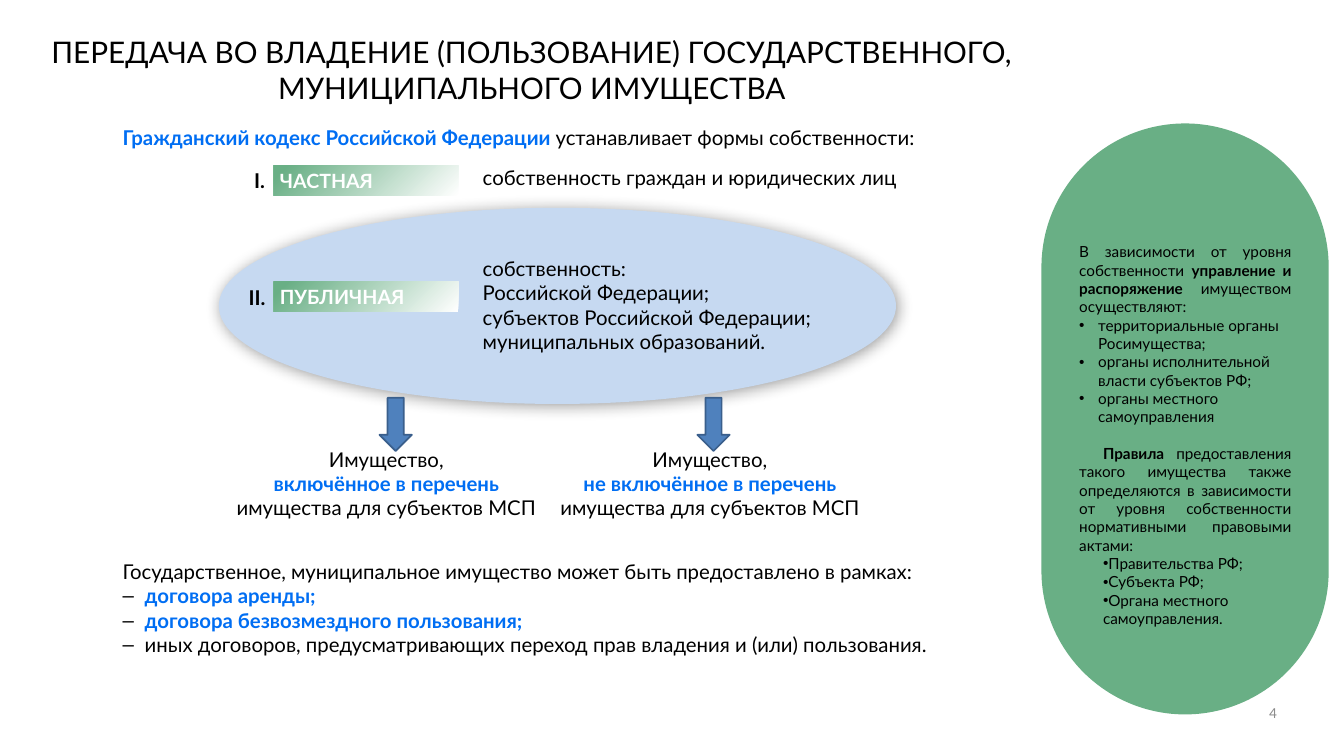
from lxml import etree
from pptx import Presentation
from pptx import util as u
from pptx.dml import color
from pptx.enum import shapes, text
from pptx.oxml import ns

COLOURS = {"text": "000000", "accent": "006EF3", "green": "69AF85", "white": "FFFFFF",
           "pale": "C6D9F1", "arrow": "4F81BD", "arrow_edge": "3A5F8C", "number": "8C8C8C"}
LEFT, CENTER, RIGHT, JUSTIFY = (text.PP_ALIGN.LEFT, text.PP_ALIGN.CENTER,
                                text.PP_ALIGN.RIGHT, text.PP_ALIGN.JUSTIFY)


def rgb(name):
    return color.RGBColor.from_string(COLOURS[name])


def add_xml(parent, xml):
    parent.append(etree.fromstring(xml.replace(">", f' xmlns:a="{ns.nsuri("a")}">', 1)
                                   if "/>" not in xml.split(">", 1)[0] + ">"
                                   else xml.replace("/>", f' xmlns:a="{ns.nsuri("a")}"/>', 1)))


def add_spans(para, spans, size, tint="text", font="Lato"):
    """Add runs to a paragraph; each span is plain text or (text, colour) for bold."""
    for span in [spans] if isinstance(spans, str) else spans:
        words, shade = (span, tint) if isinstance(span, str) else span
        run = para.add_run()
        run.text = words
        run.font.name, run.font.size = font, u.Pt(size)
        run.font.bold = not isinstance(span, str)
        run.font.color.rgb = rgb(shade)


def set_bullet(para, mark, margin, indent):
    props = para._p.get_or_add_pPr()
    props.set("marL", str(u.Inches(margin)))
    props.set("indent", str(u.Inches(indent)))
    if mark:
        add_xml(props, f'<a:buClr><a:srgbClr val="{COLOURS["text"]}"/></a:buClr>')
        add_xml(props, '<a:buFont typeface="Arial"/>')
        add_xml(props, f'<a:buChar char="{mark}"/>')


def add_text(slide, box, lines, size=24, align=LEFT, tint="text", font="Lato"):
    frame = slide.shapes.add_textbox(*map(u.Inches, box)).text_frame
    frame.word_wrap = True
    for index, line in enumerate(lines):
        para = frame.paragraphs[0] if index == 0 else frame.add_paragraph()
        para.alignment = align
        add_spans(para, line, size, tint, font)
    return frame


def add_figure(slide, kind, box, fill):
    figure = slide.shapes.add_shape(kind, *map(u.Inches, box))
    figure.shadow.inherit = False
    figure.fill.solid()
    figure.fill.fore_color.rgb = rgb(fill)
    figure.line.fill.background()
    return figure


def add_title(slide, box, words):
    title = slide.shapes.title
    title.left, title.top, title.width, title.height = map(u.Inches, box)
    frame = title.text_frame
    frame.word_wrap = True
    frame.vertical_anchor = text.MSO_ANCHOR.TOP
    frame.auto_size = text.MSO_AUTO_SIZE.NONE
    frame.paragraphs[0].alignment = CENTER
    add_spans(frame.paragraphs[0], words, 35)


def add_badge(slide, box, words):
    """Add a label whose green fades out from its top left corner."""
    badge = add_figure(slide, shapes.MSO_SHAPE.RECTANGLE, box, "green")
    badge.fill.gradient()
    gradient = badge._element.spPr.find(ns.qn("a:gradFill"))
    for child in list(gradient):
        gradient.remove(child)
    stops = "".join(f'<a:gs pos="{place}"><a:srgbClr val="{COLOURS[name]}"/></a:gs>'
                    for place, name in ((6000, "green"), (100000, "white")))
    add_xml(gradient, f"<a:gsLst>{stops}</a:gsLst>")
    add_xml(gradient, '<a:path path="circle"><a:fillToRect r="100000" b="100000"/></a:path>')
    frame = badge.text_frame
    frame.word_wrap = False
    frame.vertical_anchor = text.MSO_ANCHOR.MIDDLE
    frame.paragraphs[0].alignment = LEFT
    add_spans(frame.paragraphs[0], [(words, "white")], 23.1)


def add_ownership_forms(slide, box):
    left, top, width, height = box
    add_text(slide, (left, top, width, 0.5),
             [[("Гражданский кодекс Российской Федерации ", "accent"),
               "устанавливает формы собственности:"]])
    oval = add_figure(slide, shapes.MSO_SHAPE.OVAL, (left + 1.67, top + 1.4, 11.08, 3.21), "pale")
    effects = oval._element.spPr.find(ns.qn("a:effectLst"))
    add_xml(effects, f'<a:outerShdw blurRad="{u.Pt(19)}" dist="{u.Pt(3)}" dir="2700000">'
                     f'<a:srgbClr val="{COLOURS["text"]}"><a:alpha val="40000"/></a:srgbClr>'
                     '</a:outerShdw>')
    forms = (("I.", 2.15, "ЧАСТНАЯ", 0.71, 0.66, ["собственность граждан и юридических лиц"]),
             ("II.", 2.06, "ПУБЛИЧНАЯ", 2.61, 2.14,
              ["собственность:", "Российской Федерации;",
               "субъектов Российской Федерации;", "муниципальных образований."]))
    for numeral, indent, name, row, lines_top, lines in forms:
        add_text(slide, (left + indent, top + row, 0.9, 0.5), [[(numeral, "text")]])
        add_badge(slide, (left + 2.57, top + row, 3.02, 0.49), name)
        add_text(slide, (left + 5.89, top + lines_top, 8, 0.1 + 0.4 * len(lines)), lines)


def add_property_branch(slide, box, arrow_left, listed):
    left, top, width, height = box
    arrow = add_figure(slide, shapes.MSO_SHAPE.DOWN_ARROW,
                       (arrow_left, top - 0.75, 0.53, 0.87), "arrow")
    arrow.line.color.rgb = rgb("arrow_edge")
    arrow.line.width = u.Pt(2)
    add_text(slide, box, ["Имущество,", [(listed, "accent")], "имущества для субъектов МСП"],
             align=CENTER)


def add_contracts(slide, box):
    frame = add_text(slide, box, [
        "Государственное, муниципальное имущество может быть предоставлено в рамках:",
        [("договора аренды;", "accent")],
        [("договора безвозмездного пользования;", "accent")],
        "иных договоров, предусматривающих переход прав владения и (или) пользования."])
    for para in frame.paragraphs[1:]:
        set_bullet(para, "–", 0.36, -0.36)


def add_management_panel(slide, box):
    left, top, width, height = box
    pill = add_figure(slide, shapes.MSO_SHAPE.ROUNDED_RECTANGLE, box, "green")
    pill.adjustments[0] = 0.5
    authorities = ["территориальные органы Росимущества;",
                   "органы исполнительной власти субъектов РФ;",
                   "органы местного самоуправления"]
    issuers = ["Правительства РФ;", "Субъекта РФ;", "Органа местного самоуправления."]
    managers = ["В зависимости от уровня собственности ",
                ("управление и распоряжение ", "text"), "имуществом осуществляют:"]
    rules = [("Правила ", "text"), "предоставления такого имущества также определяются "
             "в зависимости от уровня собственности нормативными правовыми актами:"]
    frame = add_text(slide, (left + 0.52, top + 1.9, 3.67, 6.46),
                     [managers, *authorities, rules, *issuers], size=18)
    paras = frame.paragraphs
    for para in paras[1:4]:
        set_bullet(para, "•", 0.31, -0.31)
    for para in paras[5:]:
        set_bullet(para, "•", 0.39, 0)
    set_bullet(paras[4], None, 0, 0.39)
    paras[4].space_before = u.Pt(21.6)
    for para in (paras[0], paras[4]):
        para.alignment = JUSTIFY


def main():
    deck = Presentation()
    deck.slide_width, deck.slide_height = u.Inches(21.99), u.Inches(12.37)
    slide = deck.slides.add_slide(deck.slide_layouts[5])
    add_title(slide, (0.58, 0.51, 16.25, 1.28),
              "ПЕРЕДАЧА ВО ВЛАДЕНИЕ (ПОЛЬЗОВАНИЕ) ГОСУДАРСТВЕННОГО, МУНИЦИПАЛЬНОГО ИМУЩЕСТВА")
    add_ownership_forms(slide, (1.91, 2, 14.37, 4.6))
    add_property_branch(slide, (3.76, 7.26, 5.12, 1.31), 6.21, "включённое в перечень")
    add_property_branch(slide, (8.74, 7.26, 5.75, 1.31), 11.41, "не включённое в перечень")
    add_contracts(slide, (1.91, 9.1, 13.9, 1.72))
    add_management_panel(slide, (17.04, 2.02, 4.7, 9.67))
    add_text(slide, (15.93, 11.45, 5.06, 0.5), ["4"], 18, RIGHT, "number", "Calibri")
    deck.save("out.pptx")


if __name__ == "__main__":
    main()
